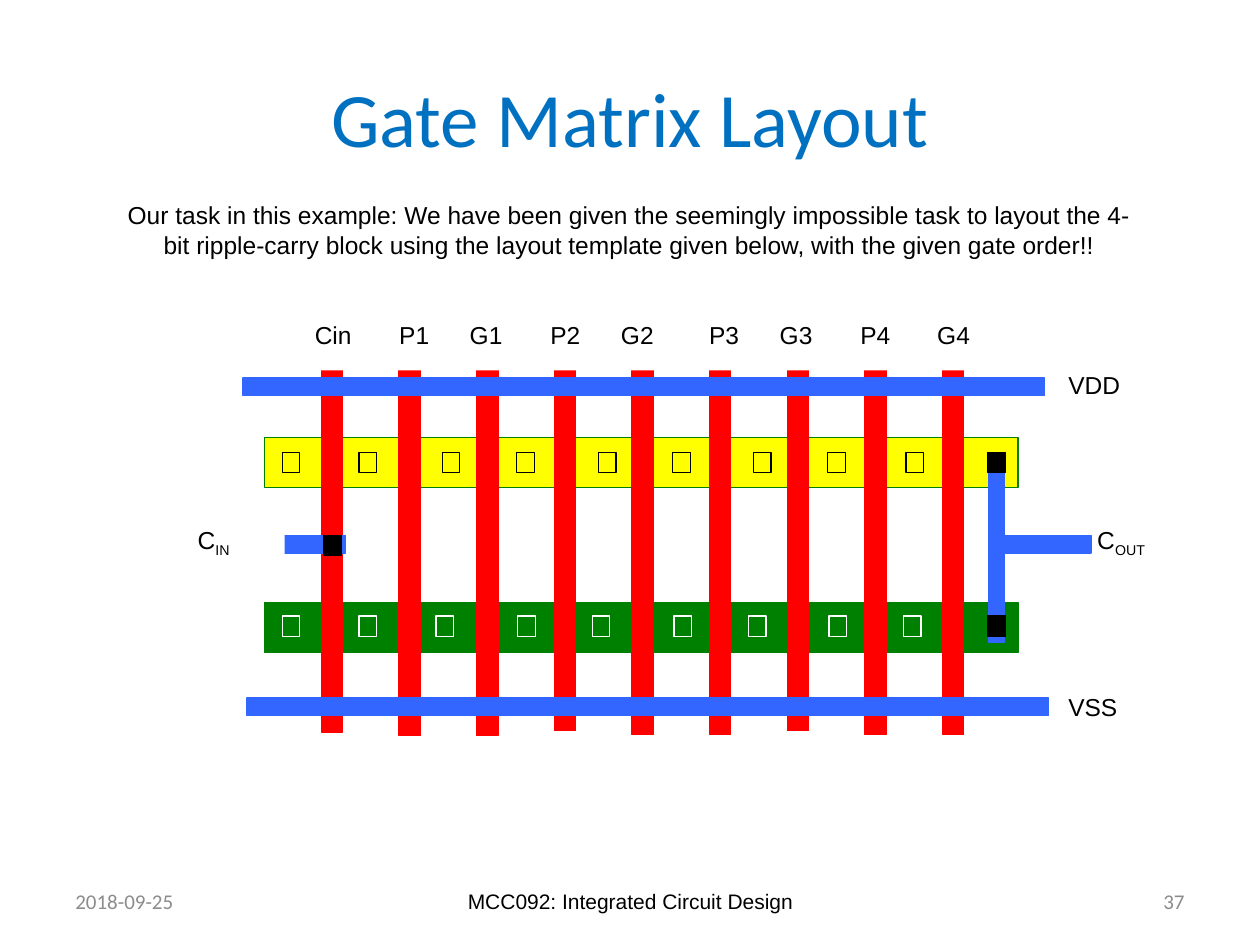
import pptx
import pptx.util
import pptx.dml.color
import pptx.enum.shapes
import pptx.enum.text
import pptx.oxml.ns
import lxml.etree

Inches = pptx.util.Inches
ALIGN = pptx.enum.text.PP_ALIGN
ANCHOR = pptx.enum.text.MSO_ANCHOR
RED, BLUE, GREEN, YELLOW = "FF0000", "3366FF", "008000", "FFFF00"
BLACK, WHITE, GREY = "000000", "FFFFFF", "8C8C8C"


def color(value):
    return pptx.dml.color.RGBColor.from_string(value)


def place(box, x, y, w, h):
    return box[0] + Inches(x), box[1] + Inches(y), Inches(w), Inches(h)


def add_rect(s, box, fill, line):
    sp = s.shapes.add_shape(pptx.enum.shapes.MSO_SHAPE.RECTANGLE, *box)
    sp.shadow.inherit = False
    if fill:
        sp.fill.solid()
        sp.fill.fore_color.rgb = color(fill)
    else:
        sp.fill.background()
    sp.line.color.rgb = color(line)
    sp.line.width = pptx.util.Pt(0.75)


def add_text(s, box, text, sub="", size=14, font="Arial", ink=BLACK,
             align=ALIGN.LEFT, anchor=ANCHOR.TOP, fill=None):
    sp = s.shapes.add_textbox(*box)
    if fill:
        sp.fill.solid()
        sp.fill.fore_color.rgb = color(fill)
    tf = sp.text_frame
    tf.word_wrap = True
    tf.vertical_anchor = anchor
    p = tf.paragraphs[0]
    p.alignment = align
    for part in filter(None, (text, sub)):
        r = p.add_run()
        r.text = part
        r.font.size = pptx.util.Pt(size)
        r.font.name = font
        r.font.color.rgb = color(ink)
        if part == sub:
            r.font._element.set("baseline", "-25000")
    return p


def set_tabs(p, stops):
    qn = pptx.oxml.ns.qn
    tabs = lxml.etree.SubElement(p._p.get_or_add_pPr(), qn("a:tabLst"))
    for stop in stops:
        lxml.etree.SubElement(tabs, qn("a:tab"), pos=str(Inches(stop)), algn="l")


def add_gates(s, box):
    pitch = 4.93 / 8
    tops = [0.37, 0.4, 0.4, 0.36, 0.39, 0.39, 0.36, 0.39, 0.39]
    for i, top in enumerate(tops):
        add_rect(s, place(box, 1.08 + i * pitch, top, 0.17, 2.95), RED, RED)


def add_labels(s, box):
    names = ["Cin", "P1", "G1", "P2", "G2", "P3", "G3", "P4", "G4"]
    p = add_text(s, place(box, 0.93, 0, 6.54, 0.45), "\t".join(names), fill=WHITE)
    set_tabs(p, [0.67, 1.23, 1.87, 2.43, 3.13, 3.69, 4.33, 4.94])
    for x, y, text, sub in [(7.14, 1.63, "C", "OUT"), (6.91, 0.4, "VDD", ""),
                            (6.91, 2.95, "VSS", ""), (0, 1.63, "C", "IN")]:
        add_text(s, place(box, x, y, 0.79, 0.45), text, sub, fill=WHITE)


def add_contacts(s, box):
    for x, y in [(6.37, 1.1), (1.1, 1.76), (6.37, 2.4)]:
        add_rect(s, place(box, x, y, 0.14, 0.16), BLACK, BLACK)
    rows = [
        (1.1, BLACK, [0.77, 1.38, 2.04, 2.63, 3.28, 3.87, 4.51, 5.1, 5.72]),
        (2.4, WHITE, [0.77, 1.38, 1.99, 2.64, 3.23, 3.88, 4.47, 5.11, 5.7]),
    ]
    for y, line, lefts in rows:
        for x in lefts:
            add_rect(s, place(box, x, y, 0.14, 0.16), None, line)


def add_gate_matrix(s, box):
    for y, fill in [(0.98, YELLOW), (2.29, GREEN)]:
        add_rect(s, place(box, 0.63, y, 5.98, 0.4), fill, GREEN)
    add_gates(s, box)
    for x, y, w in [(0.46, 0.51, 6.36), (0.49, 3.05, 6.36), (0.46, 1.76, 0.81)]:
        add_rect(s, place(box, x, y, w, 0.14), BLUE, BLUE)
    add_labels(s, box)
    for x, y, w, h in [(6.38, 1.76, 0.81, 0.14), (6.38, 1.1, 0.12, 1.51)]:
        add_rect(s, place(box, x, y, w, h), BLUE, BLUE)
    add_contacts(s, box)


def add_heading(s, box):
    add_text(s, place(box, 0, 0, 9, 1.25), "Gate Matrix Layout", size=44,
             font="Calibri", ink="0070C0", align=ALIGN.CENTER, anchor=ANCHOR.MIDDLE)
    add_text(s, place(box, 0.38, 1.24, 8.23, 0.77),
             "Our task in this example: We have been given the seemingly "
             "impossible task to layout the 4-bit ripple-carry block using the "
             "layout template given below, with the given gate order!!",
             align=ALIGN.CENTER)


def add_footer(s, box):
    for x, w, text, font, ink, align in [
        (0, 2.33, "2018-09-25", "Calibri", GREY, ALIGN.LEFT),
        (2.92, 3.17, "MCC092: Integrated Circuit Design", "Arial", BLACK, ALIGN.CENTER),
        (6.67, 2.33, "37", "Calibri", GREY, ALIGN.RIGHT),
    ]:
        add_text(s, place(box, x, 0, w, 0.4), text, size=12, font=font,
                 ink=ink, align=align, anchor=ANCHOR.MIDDLE)


def main():
    prs = pptx.Presentation()
    prs.slide_width, prs.slide_height = Inches(10), Inches(7.5)
    s = prs.slides.add_slide(prs.slide_layouts[6])
    add_heading(s, (Inches(0.5), Inches(0.3)))
    add_gate_matrix(s, (Inches(1.47), Inches(2.49)))
    add_footer(s, (Inches(0.5), Inches(6.95)))
    prs.save("out.pptx")


if __name__ == "__main__":
    main()
